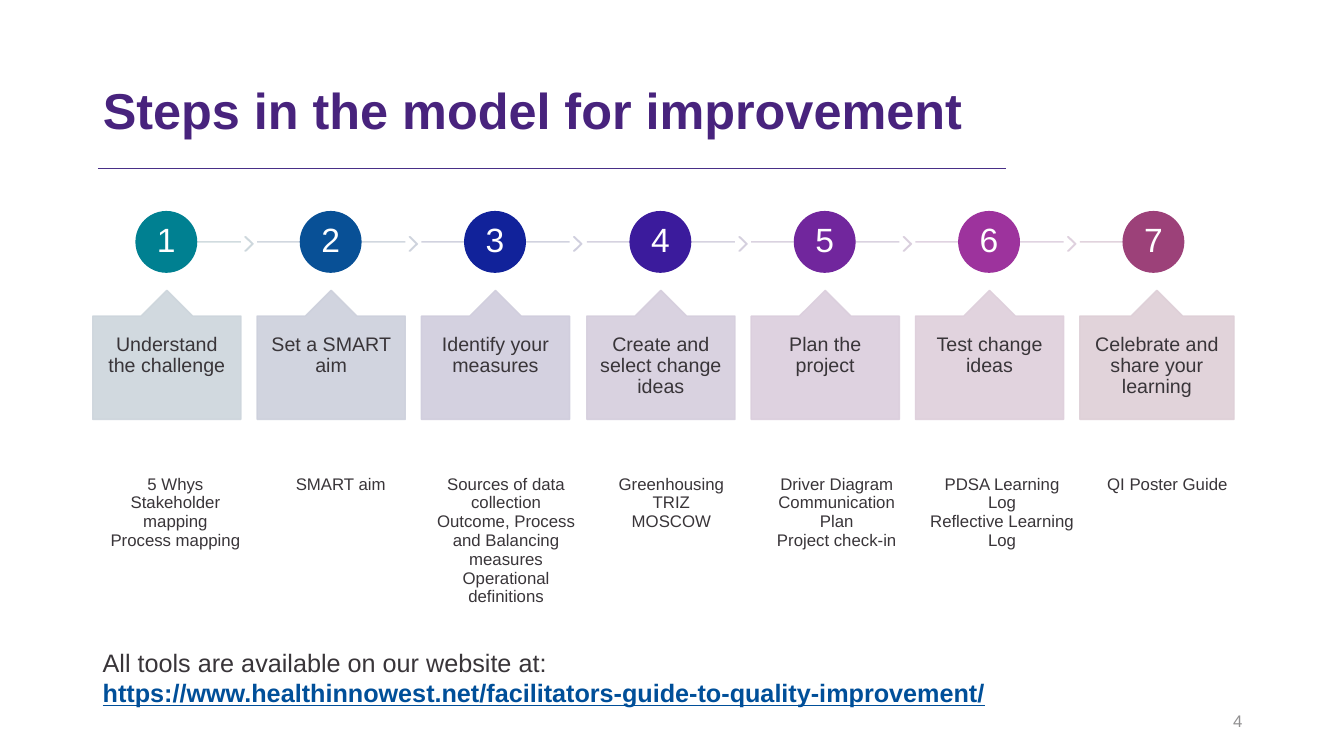
from dataclasses import dataclass
from typing import Optional

from lxml.etree import SubElement
from pptx import Presentation
from pptx.dml.color import RGBColor
from pptx.enum.shapes import MSO_CONNECTOR, MSO_SHAPE
from pptx.enum.text import MSO_ANCHOR as Anchor, PP_ALIGN as Align
from pptx.oxml.ns import qn
from pptx.util import Pt

PX = 9144  # EMU per px, 100 px to the inch
FONT = "Arial"
FIRST_LEFT, LAST_LEFT = 92, 1071
CARD_TOP, CARD_HEIGHT = 288, 128
TRACK_Y = 240

COLOURS = {
    "title": "48237D", "rule": "492F87", "text": "393539", "white": "FFFFFF",
    "link": "004F99", "page": "919091",
    "circle1": "008091", "track1": "CCD8DC", "chevron1": "CCD6DC", "card1": "CDD5DC",
    "circle2": "085096", "track2": "CDD3DC", "chevron2": "CDD2DC", "card2": "CDD0DC",
    "circle3": "11229A", "track3": "CDCEDC", "chevron3": "CECDDD", "card3": "D0CDDD",
    "circle4": "3B1B9C", "track4": "D2CEDD", "chevron4": "D3CEDD", "card4": "D5CEDD",
    "circle5": "71269D", "track5": "D7CEDD", "chevron5": "D9CEDD", "card5": "DBCEDD",
    "circle6": "9D339D", "track6": "DDCFDE", "chevron6": "DECFDD", "card6": "DECFDB",
    "circle7": "9C4179", "track7": "DECFDA", "card7": "DECFD7",
}


@dataclass(frozen=True)
class Step:
    label: str
    tools: tuple[str, ...]
    card_width: int = 147
    track_start: int = 0
    track_end: int = 147


@dataclass(frozen=True)
class Box:
    left: int
    top: int
    width: int
    height: int

    def emu(self) -> tuple[int, int, int, int]:
        return self.left * PX, self.top * PX, self.width * PX, self.height * PX


STEPS = (
    Step("Understand the challenge",
         ("5 Whys", "Stakeholder mapping", "Process mapping"), track_start=82),
    Step("Set a SMART aim", ("SMART aim",)),
    Step("Identify your measures",
         ("Sources of data collection", "Outcome, Process and Balancing measures",
          "Operational definitions")),
    Step("Create and select change ideas", ("Greenhousing", "TRIZ", "MOSCOW")),
    Step("Plan the project",
         ("Driver Diagram", "Communication Plan", "Project check-in")),
    Step("Test change ideas", ("PDSA Learning Log", "Reflective Learning Log")),
    Step("Celebrate and share your learning", ("QI Poster Guide",),
         card_width=153, track_end=73),
)


def colour(name: str) -> RGBColor:
    return RGBColor.from_string(COLOURS[name])


def add_run(paragraph, text: str, size: int, colour_name: str,
            bold: bool = False, underline: bool = False) -> None:
    run = paragraph.add_run()
    run.text = text
    font = run.font
    font.name, font.size = FONT, Pt(size)
    font.bold, font.underline = bold, underline
    font.color.rgb = colour(colour_name)


def set_margins(frame, across: int, down: int) -> None:
    frame.margin_left = frame.margin_right = across * PX
    frame.margin_top = frame.margin_bottom = down * PX


def set_opacity(shape, percent: int) -> None:
    """Make the fill and the line of the shape partly transparent."""
    for element in shape._element.spPr.iter(qn("a:srgbClr")):
        SubElement(element, qn("a:alpha"), val=str(percent * 1000))


def add_line(slide, left: int, right: int, y: int, colour_name: str,
             width: float, opacity: Optional[int] = None) -> None:
    line = slide.shapes.add_connector(
        MSO_CONNECTOR.STRAIGHT, left * PX, y * PX, right * PX, y * PX)
    line.line.color.rgb = colour(colour_name)
    line.line.width = Pt(width)
    if opacity is not None:
        set_opacity(line, opacity)
    SubElement(line._element.spPr, qn("a:effectLst"))


def add_solid(slide, kind: MSO_SHAPE, box: Box, colour_name: str,
              adjustments: tuple[float, ...] = (), opacity: Optional[int] = None):
    """Add a shape whose fill and outline share one colour."""
    shape = slide.shapes.add_shape(kind, *box.emu())
    shape.shadow.inherit = False
    for index, value in enumerate(adjustments):
        shape.adjustments[index] = value
    shape.fill.solid()
    shape.fill.fore_color.rgb = colour(colour_name)
    shape.line.color.rgb = colour(colour_name)
    shape.line.width = Pt(1)
    if opacity is not None:
        set_opacity(shape, opacity)
    return shape


def write_in_shape(shape, text: str, size: int, colour_name: str,
                   anchor: Anchor, margins: tuple[int, int]) -> None:
    frame = shape.text_frame
    frame.word_wrap = True
    frame.vertical_anchor = anchor
    set_margins(frame, *margins)
    paragraph = frame.paragraphs[0]
    paragraph.alignment = Align.CENTER
    paragraph.line_spacing = 0.9
    add_run(paragraph, text, size, colour_name)


def add_text_box(slide, box: Box):
    frame = slide.shapes.add_textbox(*box.emu()).text_frame
    frame.word_wrap = True
    return frame


def add_step(slide, index: int, step: Step) -> None:
    number = index + 1
    left = FIRST_LEFT + round(index * (LAST_LEFT - FIRST_LEFT) / (len(STEPS) - 1))
    add_line(slide, left + step.track_start, left + step.track_end, TRACK_Y,
             f"track{number}", 1, 90)
    if number < len(STEPS):
        add_solid(slide, MSO_SHAPE.CHEVRON, Box(left + 151, 235, 8, 14),
                  f"chevron{number}", (0.9,), 90)
    circle = add_solid(slide, MSO_SHAPE.OVAL, Box(left + 43, 210, 60, 60),
                       f"circle{number}")
    write_in_shape(circle, str(number), 24, "white", Anchor.MIDDLE, (2, 2))
    card = add_solid(slide, MSO_SHAPE.UP_ARROW_CALLOUT,
                     Box(left, CARD_TOP, step.card_width, CARD_HEIGHT),
                     f"card{number}", (0.5, 0.2, 0.2, 1), 90)
    write_in_shape(card, step.label, 14, "text", Anchor.TOP, (12, 18))


def add_title(slide) -> None:
    title = slide.shapes.title
    title.left, title.top, title.width, title.height = Box(92, 40, 907, 145).emu()
    title.text_frame.vertical_anchor = Anchor.MIDDLE
    paragraph = title.text_frame.paragraphs[0]
    paragraph.alignment = Align.LEFT
    paragraph.line_spacing = 0.9
    add_run(paragraph, "Steps in the model for improvement", 36, "title", bold=True)


def add_tools_table(slide) -> None:
    table = slide.shapes.add_table(
        1, len(STEPS), *Box(FIRST_LEFT, 466, 164 * len(STEPS), 92).emu()).table
    table.first_row = table.horz_banding = False
    for cell, step in zip(table.rows[0].cells, STEPS):
        cell.fill.background()
        frame = cell.text_frame
        for position, tool in enumerate(step.tools):
            paragraph = frame.add_paragraph() if position else frame.paragraphs[0]
            paragraph.alignment = Align.CENTER
            add_run(paragraph, tool, 12, "text")


def main() -> None:
    presentation = Presentation()
    presentation.slide_width, presentation.slide_height = 1333 * PX, 750 * PX
    slide = presentation.slides.add_slide(presentation.slide_layouts[5])

    add_line(slide, 97, 998, 167, "rule", 0.47)
    add_title(slide)
    for index, step in enumerate(STEPS):
        add_step(slide, index, step)
    add_tools_table(slide)

    website = add_text_box(slide, Box(92, 637, 1060, 71))
    add_run(website.paragraphs[0], "All tools are available on our website at:", 18, "text")
    add_run(website.add_paragraph(),
            "https://www.healthinnowest.net/facilitators-guide-to-quality-improvement/",
            18, "link", bold=True, underline=True)

    page = add_text_box(slide, Box(942, 695, 300, 40))
    page.vertical_anchor = Anchor.MIDDLE
    page.paragraphs[0].alignment = Align.RIGHT
    add_run(page.paragraphs[0], "4", 12, "page")

    presentation.save("out.pptx")


if __name__ == "__main__":
    main()
